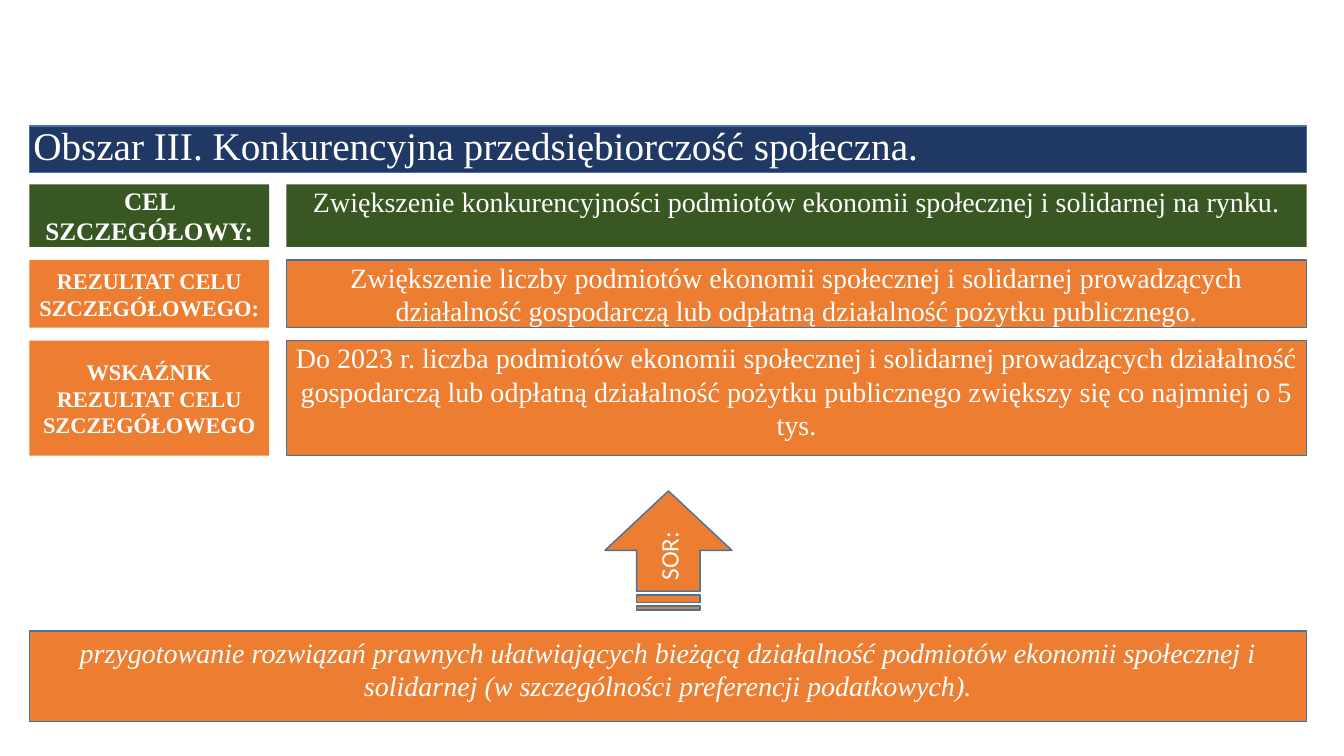
from pptx import Presentation
from pptx.dml.color import RGBColor
from pptx.enum.shapes import MSO_SHAPE as SHAPE
from pptx.enum.text import MSO_ANCHOR as ANCHOR, PP_ALIGN as ALIGN
from pptx.util import Inches, Pt

COLORS = {"navy": "203864", "green": "385723", "orange": "ED7D31",
          "edge": "43739E", "white": "FFFFFF"}
SERIF = "Times New Roman"

prs = Presentation()
prs.slide_width, prs.slide_height = Inches(13.33), Inches(7.5)
s = prs.slides.add_slide(prs.slide_layouts[6])


def color(name):
    return RGBColor.from_string(COLORS[name])


def add_block(box, text, fill, size, kind=SHAPE.RECTANGLE, edge=True, anchor=ANCHOR.TOP,
              align=ALIGN.CENTER, font=SERIF, top_inset=0.04):
    """Add a filled shape with one white paragraph; box is left, top, width, height in inches."""
    sp = s.shapes.add_shape(kind, *map(Inches, box))
    sp.shadow.inherit = False
    sp.fill.solid()
    sp.fill.fore_color.rgb = color(fill)
    if edge:
        sp.line.color.rgb = color("edge")
        sp.line.width = Pt(1)
    else:
        sp.line.fill.background()
    tf = sp.text_frame
    tf.word_wrap = True
    tf.vertical_anchor = anchor
    tf.margin_left = tf.margin_right = tf.margin_bottom = Inches(0.04)
    tf.margin_top = Inches(top_inset)
    p = tf.paragraphs[0]
    p.text = text
    p.alignment = align
    p.font.name, p.font.size = font, Pt(size)
    p.font.color.rgb = color("white")
    return sp


# Grid: a label column and a content column inside the full width
LEFT, WIDTH = 0.29, 12.67
LABEL_W, GAP = 2.38, 0.17
CONTENT_LEFT = LEFT + LABEL_W + GAP
CONTENT_W = WIDTH - LABEL_W - GAP
ROW_GAP = 0.13

add_block((LEFT, 1.25, WIDTH, 0.46), "Obszar III. Konkurencyjna przedsiębiorczość społeczna.",
          "navy", 28, anchor=ANCHOR.BOTTOM, align=ALIGN.LEFT)

# Row height, fill, label size, content outline, label, content
rows = [
    (0.62, "green", 18, False, "CEL SZCZEGÓŁOWY:",
     "Zwiększenie konkurencyjności podmiotów ekonomii społecznej i solidarnej na rynku."),
    (0.67, "orange", 16, True, "REZULTAT CELU SZCZEGÓŁOWEGO:",
     "Zwiększenie liczby podmiotów ekonomii społecznej i solidarnej prowadzących "
     "działalność gospodarczą lub odpłatną działalność pożytku publicznego."),
    (1.14, "orange", 16, True, "WSKAŹNIK REZULTAT CELU SZCZEGÓŁOWEGO",
     "Do 2023 r. liczba podmiotów ekonomii społecznej i solidarnej prowadzących "
     "działalność gospodarczą lub odpłatną działalność pożytku publicznego "
     "zwiększy się co najmniej o 5 tys."),
]
top = 1.83
for height, fill, label_size, edge, label, content in rows:
    sp = add_block((LEFT, top, LABEL_W, height), label, fill, label_size,
                   edge=False, anchor=ANCHOR.MIDDLE)
    sp.text_frame.paragraphs[0].font.bold = True
    add_block((CONTENT_LEFT, top, CONTENT_W, height), content, fill, 20,
              edge=edge, top_inset=0)
    top += height + ROW_GAP

arrow = add_block((6.04, 4.83, 1.18, 1.26), "SOR:", "orange", 18, SHAPE.STRIPED_RIGHT_ARROW,
                  anchor=ANCHOR.MIDDLE, font="Calibri")
arrow.rotation = 270

sp = add_block((LEFT, 6.26, WIDTH, 0.9),
               "przygotowanie rozwiązań prawnych ułatwiających bieżącą działalność podmiotów "
               "ekonomii społecznej i solidarnej (w szczególności preferencji podatkowych).",
               "orange", 20)
sp.text_frame.paragraphs[0].font.italic = True

prs.save("out.pptx")
